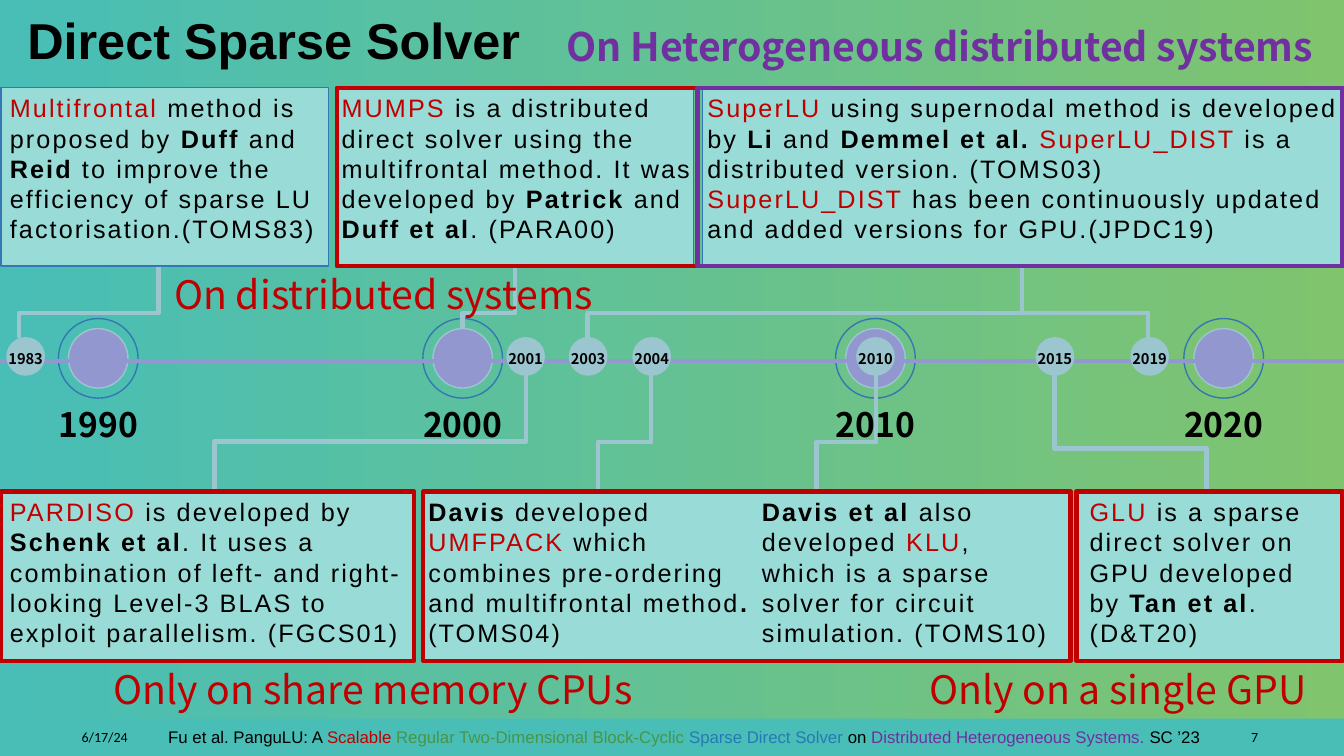
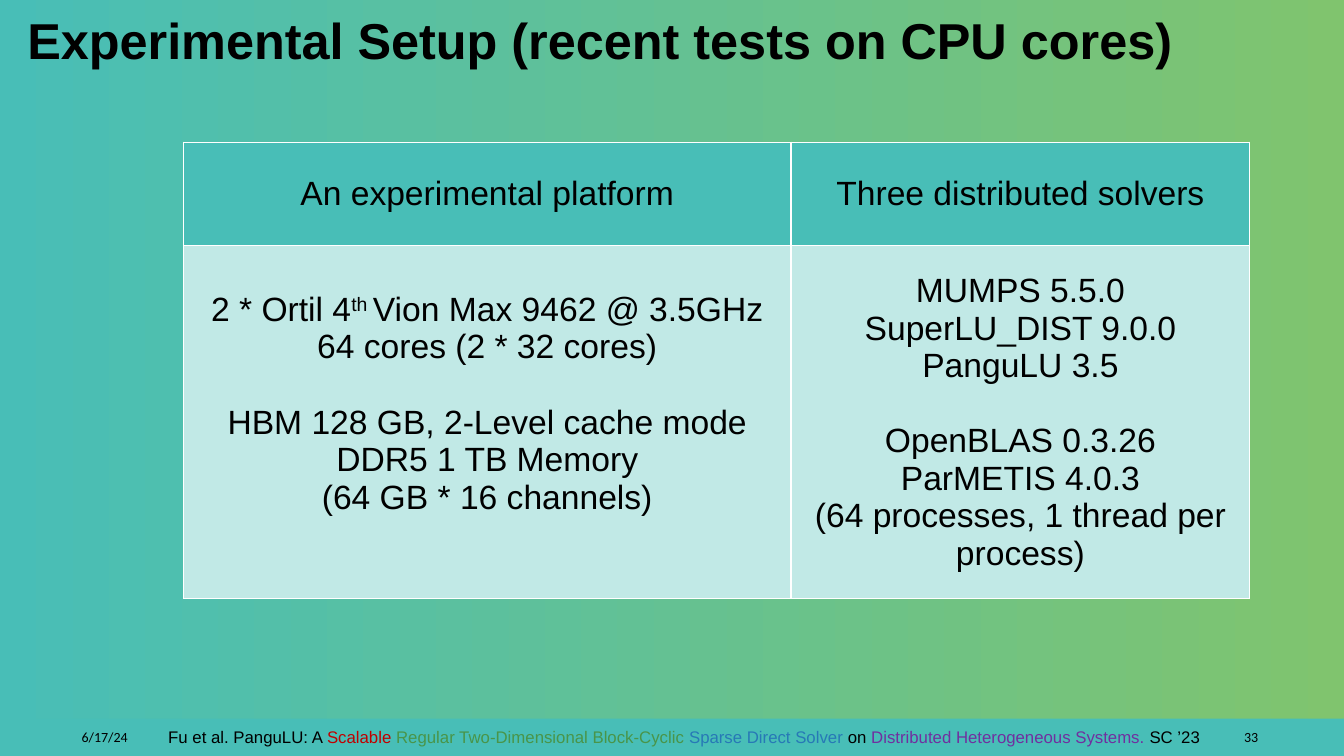
from lxml import etree
from pptx import Presentation
from pptx.dml.color import RGBColor
from pptx.enum.shapes import MSO_CONNECTOR as LINK, MSO_SHAPE as SHAPE
from pptx.enum.text import MSO_ANCHOR as ANCHOR, PP_ALIGN as ALIGN
from pptx.oxml.ns import qn
from pptx.util import Inches, Pt

BLACK = RGBColor(0x00, 0x00, 0x00)
TEAL = RGBColor(0x48, 0xBE, 0xB7)
GREEN = RGBColor(0x80, 0xC4, 0x6E)
AQUA = RGBColor(0x99, 0xDB, 0xD6)
PALE = RGBColor(0xC1, 0xE9, 0xE6)
MIST = RGBColor(0x9C, 0xC6, 0xCF)
LILAC = RGBColor(0x92, 0x97, 0xCF)
BLUE = RGBColor(0x34, 0x77, 0xB2)
RED = RGBColor(0xC0, 0x00, 0x00)
PURPLE = RGBColor(0x70, 0x30, 0xA0)
LEAF = RGBColor(0x49, 0x95, 0x49)
SKY = RGBColor(0x27, 0x79, 0xB6)

# Run styles: colour, bold
PLAIN = (BLACK, False)
STRONG = (BLACK, True)
SOLVER = (RED, False)
SANS, CJK, SMALL = "Arial", "Noto Sans CJK SC", "Calibri"

prs = Presentation()
prs.slide_width, prs.slide_height = Inches(13.33), Inches(7.5)
# All positions are percentages of the slide's width and height
X, Y = prs.slide_width / 100, prs.slide_height / 100


def add_box(s, x, y, w, h, kind=None, fill=None, line=None, weight=1):
    """Add a preset shape, or a text box when no kind is given."""
    pos = int(x * X), int(y * Y), int(w * X), int(h * Y)
    if kind is None:
        return s.shapes.add_textbox(*pos)
    sp = s.shapes.add_shape(kind, *pos)
    sp.shadow.inherit = False
    if fill is None:
        sp.fill.background()
    else:
        sp.fill.solid()
        sp.fill.fore_color.rgb = fill
    if line is None:
        sp.line.fill.background()
    else:
        sp.line.color.rgb = line
        sp.line.width = Pt(weight)
    return sp


def write(tf, lines, size, font, align=ALIGN.LEFT, tracking=0):
    """Fill a text frame; each line is a list of (text, style) runs."""
    tf.word_wrap = True
    for i, runs in enumerate(lines):
        p = tf.add_paragraph() if i else tf.paragraphs[0]
        p.alignment = align
        for text, (color, bold) in runs:
            r = p.add_run()
            r.text = text
            r.font.size, r.font.name, r.font.bold = Pt(size), font, bold
            r.font.color.rgb = color
            if tracking:
                r.font._element.set("spc", str(tracking))


# Shared background, title, band and footer
fill = prs.slide_master.background.fill
fill.gradient()
fill.gradient_angle = 0
for stop, color, position in zip(fill.gradient_stops, (TEAL, GREEN), (0, 1)):
    stop.color.rgb = color
    stop.position = position

CITATION = [
    ("Fu et al. PanguLU: A ", PLAIN),
    ("Scalable ", SOLVER),
    ("Regular Two-Dimensional Block-Cyclic ", (LEAF, False)),
    ("Sparse Direct Solver ", (SKY, False)),
    ("on ", PLAIN),
    ("Distributed Heterogeneous Systems. ", (PURPLE, False)),
    ("SC ’23", PLAIN),
]
BAND_Y, BAND_H = 95.07, 4.93
layout = prs.slide_layouts[5]
slides = []
for title, number in [("Direct Sparse Solver", "7"),
                      ("Experimental Setup (recent tests on CPU cores)", "33")]:
    s = prs.slides.add_slide(layout)
    slides.append(s)
    sp = s.shapes.title
    sp.left, sp.top = int(1.28 * X), int(0.53 * Y)
    sp.width, sp.height = int(92 * X), int(9.47 * Y)
    sp.text_frame.vertical_anchor = ANCHOR.TOP
    write(sp.text_frame, [[(title, STRONG)]], 36, SANS)

    add_box(s, 0, BAND_Y, 100, BAND_H, SHAPE.RECTANGLE, TEAL)
    write(add_box(s, 11.78, 95.47, 88, 4.5).text_frame, [CITATION], 12, SANS)
    for x, w, text, align in [(5.33, 6.4, "6/17/24", ALIGN.LEFT),
                              (89.85, 4.5, number, ALIGN.RIGHT)]:
        tf = add_box(s, x, BAND_Y, w, BAND_H).text_frame
        tf.vertical_anchor = ANCHOR.MIDDLE
        write(tf, [[(text, PLAIN)]], 10, SMALL, align)

# Timeline slide
s = slides[0]
AXIS = 47.4
TOP, TOP_H = 11.6, 23.6
LOW, LOW_H = 65, 22.4
BUS = 41.4
DECADES = [("1990", 7.31), ("2000", 34.43), ("2010", 65.14), ("2020", 91.05)]
YEARS = [("1983", 1.91), ("2001", 39.11), ("2003", 43.76), ("2004", 48.49),
         ("2010", 65.14), ("2015", 78.49), ("2019", 85.54)]

for _, x in DECADES:
    for w, h, color, edge in [(4.43, 7.87, LILAC, MIST), (5.93, 10.53, None, BLUE)]:
        add_box(s, x - w / 2, AXIS - h / 2, w, h, SHAPE.OVAL, color, edge)

# Start, end, and the height of the bend (None for a straight line)
LINKS = [
    (0, 47.73, 100, 47.73, None, LILAC),
    (76.05, TOP + TOP_H, 76.05, BUS, None, MIST),
    (43.6, BUS, 85.6, BUS, None, MIST),
    (43.73, BUS, 43.73, 45.7, None, MIST),
    (85.43, BUS, 85.43, 45.7, None, MIST),
    (11.78, TOP + TOP_H, 1.43, 44.67, BUS, MIST),
    (38.33, TOP + TOP_H, 34.43, 43.47, BUS, MIST),
    (39.15, 49.33, 15.98, LOW, 58.4, MIST),
    (48.45, 48.8, 44.48, LOW, 58.5, MIST),
    (65.18, 48.8, 60.75, LOW, 58.5, MIST),
    (78.45, 49.33, 89.78, LOW, 59.33, MIST),
]
for x1, y1, x2, y2, bend, color in LINKS:
    if bend is None:
        c = s.shapes.add_connector(LINK.STRAIGHT, int(x1 * X), int(y1 * Y),
                                   int(x2 * X), int(y2 * Y))
    else:
        # An elbow leaves sideways, so it is laid flat and turned by 90 degrees
        cx, cy = (x1 + x2) / 2 * X, (y1 + y2) / 2 * Y
        dx, dy = (x2 - x1) / 2 * X, (y2 - y1) / 2 * Y
        c = s.shapes.add_connector(LINK.ELBOW, int(cx - dy), int(cy + dx),
                                   int(cx + dy), int(cy - dx))
        c._element.spPr.find(qn("a:xfrm")).set("rot", "5400000")
        geom = c._element.spPr.find(qn("a:prstGeom"))
        guides = geom.find(qn("a:avLst"))
        if guides is None:
            guides = etree.SubElement(geom, qn("a:avLst"))
        share = round((bend - y1) / (y2 - y1) * 100000)
        etree.SubElement(guides, qn("a:gd"), name="adj1", fmla=f"val {share}")
    c.line.color.rgb = color
    c.line.width = Pt(3.25)
    etree.SubElement(c._element.spPr, qn("a:effectLst"))

for year, x in DECADES:
    tf = add_box(s, x - 4.05, 52.8, 8.1, 6.67).text_frame
    write(tf, [[(year, STRONG)]], 24, CJK, ALIGN.CENTER)
for year, x in YEARS:
    add_box(s, x - 1.39, AXIS - 2.72, 2.78, 4.93, SHAPE.OVAL, MIST, MIST)
    tf = add_box(s, x - 3.6, 45.6, 7.2, 3.73).text_frame
    write(tf, [[(year, STRONG)]], 10.5, CJK, ALIGN.CENTER)

CARDS = [
    (0.08, TOP, 24.38, TOP_H, AQUA, BLUE, 1),
    (25.05, TOP, 26.55, TOP_H, AQUA, BLUE, 1),
    (52.28, TOP, 47.55, TOP_H, AQUA, BLUE, 1),
    (25.05, TOP, 74.78, TOP_H, None, RED, 3),
    (51.9, TOP, 48, TOP_H, None, PURPLE, 3),
    (0.08, LOW, 30.75, LOW_H, AQUA, RED, 3),
    (31.5, LOW, 48.15, LOW_H, AQUA, RED, 3),
    (80.1, LOW, 19.8, LOW_H, AQUA, RED, 3),
]
for x, y, w, h, color, edge, weight in CARDS:
    add_box(s, x, y, w, h, SHAPE.RECTANGLE, color, edge, weight)

STORIES = [
    (0, TOP, 25.2, [[
        ("Multifrontal", SOLVER), (" method is proposed by ", PLAIN),
        ("Duff ", STRONG), ("and", PLAIN), (" Reid", STRONG),
        (" to improve the efficiency of sparse LU factorisation.(TOMS83)", PLAIN)]]),
    (24.68, TOP, 30.6, [[
        ("MUMPS", SOLVER),
        (" is a distributed direct solver using the multifrontal method. "
         "It was developed by ", PLAIN),
        ("Patrick ", STRONG), ("and", PLAIN), (" Duff et al", STRONG),
        (". (PARA00)", PLAIN)]]),
    (51.9, TOP, 48.75, [
        [("SuperLU ", SOLVER),
         ("using supernodal method is developed by ", PLAIN),
         ("Li ", STRONG), ("and ", PLAIN), ("Demmel et al. ", STRONG),
         ("SuperLU_DIST ", SOLVER), ("is a distributed version. (TOMS03)", PLAIN)],
        [("SuperLU_DIST ", SOLVER),
         ("has been continuously updated and added versions for GPU.(JPDC19)",
          PLAIN)]]),
    (0, LOW, 31.88, [[
        ("PARDISO", SOLVER), (" is developed by ", PLAIN),
        ("Schenk et al", STRONG),
        (". It uses a combination of left- and right-looking Level-3 BLAS "
         "to exploit parallelism. (FGCS01)", PLAIN)]]),
    (31.13, LOW, 26.93, [[
        ("Davis ", STRONG), ("developed ", PLAIN), ("UMFPACK ", SOLVER),
        ("which combines pre-ordering and multifrontal method", PLAIN),
        (". ", STRONG), ("(TOMS04)", PLAIN)]]),
    (55.95, LOW, 22.95, [[
        ("Davis et al ", STRONG), ("also developed ", PLAIN), ("KLU", SOLVER),
        (", which is a sparse solver for circuit simulation. (TOMS10)", PLAIN)]]),
    (80.33, LOW, 19.58, [[
        ("GLU", SOLVER), (" is a sparse direct solver on GPU developed by ", PLAIN),
        ("Tan et al", STRONG), (". (D&T20)", PLAIN)]]),
]
for x, y, w, lines in STORIES:
    write(add_box(s, x, y, w, 21.6).text_frame, lines, 18, SANS, tracking=150)

for x, y, w, text, style in [
        (41.4, 2.27, 58.5, "On Heterogeneous distributed systems", (PURPLE, True)),
        (12.23, 35.07, 54, "On distributed systems", SOLVER),
        (7.73, 87.33, 54, "Only on share memory CPUs", SOLVER),
        (68.4, 87.33, 31.5, "Only on a single GPU", SOLVER)]:
    write(add_box(s, x, y, w, 7.6).text_frame, [[(text, style)]], 28, CJK)

# Setup slide
COLUMNS = [
    (45.2, "An experimental platform", [
        [("2 * Ortil 4", PLAIN), ("th ", PLAIN), ("Vion Max 9462 @ 3.5GHz", PLAIN)],
        [("64 cores (2 * 32 cores)", PLAIN)],
        [("HBM 128 GB, 2-Level cache mode", PLAIN)],
        [("DDR5 1 TB Memory", PLAIN)],
        [("(64 GB * 16 channels)", PLAIN)]], 2),
    (34.15, "Three distributed solvers", [
        [("MUMPS 5.5.0", PLAIN)],
        [("SuperLU_DIST 9.0.0", PLAIN)],
        [("PanguLU 3.5", PLAIN)],
        [("OpenBLAS 0.3.26", PLAIN)],
        [("ParMETIS 4.0.3", PLAIN)],
        [("(64 processes, 1 thread per process)", PLAIN)]], 3),
]
table = slides[1].shapes.add_table(2, 2, int(13.65 * X), int(18.8 * Y),
                                   int(79.35 * X), int(60.4 * Y)).table
for row, h in zip(table.rows, (13.73, 46.67)):
    row.height = int(h * Y)
for i, (w, heading, details, second_group) in enumerate(COLUMNS):
    table.columns[i].width = int(w * X)
    for j, (lines, color) in enumerate([([[(heading, PLAIN)]], TEAL), (details, PALE)]):
        cell = table.cell(j, i)
        cell.fill.solid()
        cell.fill.fore_color.rgb = color
        cell.vertical_anchor = ANCHOR.MIDDLE
        write(cell.text_frame, lines, 24, SANS, ALIGN.CENTER)
    cell.text_frame.paragraphs[second_group].space_before = Pt(27)
platform = table.cell(1, 0)
platform.margin_bottom = Inches(0.42)
platform.text_frame.paragraphs[0].runs[1].font._element.set("baseline", "30000")

prs.save("out.pptx")
